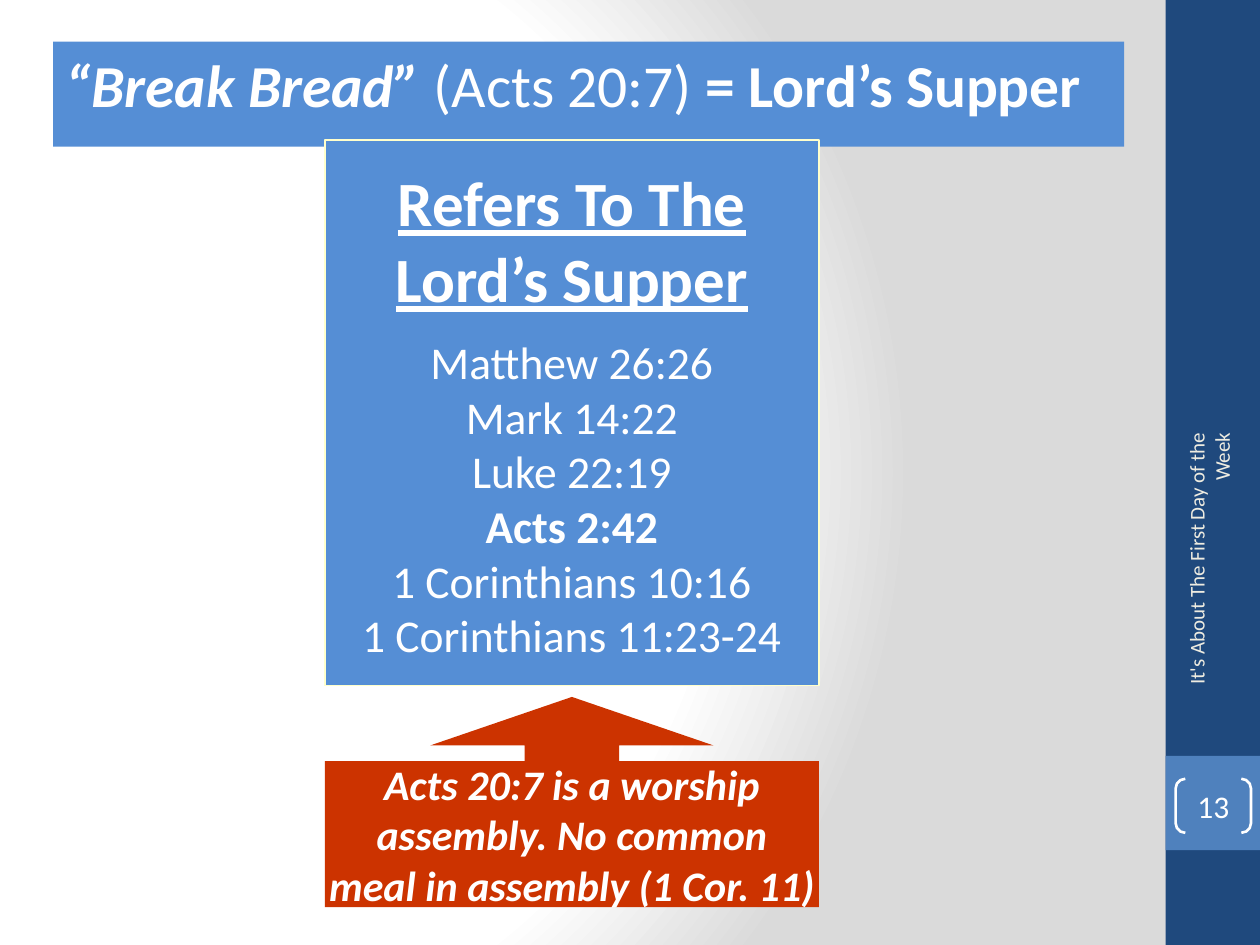
"""Build a Bible-study slide that links "Break Bread" to the Lord's Supper."""
from pptx import Presentation
from pptx import util as u
from pptx.dml.color import RGBColor
from pptx.enum import shapes, text
from pptx.oxml import parse_xml
from pptx.oxml.ns import nsdecls, qn

COLORS = {
    "white": "FFFFFF", "silver": "DADADA", "navy": "1F497D", "tile": "4F81BD",
    "blue": "558ED5", "cream": "FFFFCC", "red": "CC3300", "ivory": "EEECE1",
}
CENTER = text.PP_ALIGN.CENTER
MIDDLE = text.MSO_ANCHOR.MIDDLE


def color(name):
    return RGBColor.from_string(COLORS[name])


def add_span(para, words, size=18, ink="white", bold=False, italic=False, underline=False):
    span = para.add_run()
    span.text = words
    font = span.font
    font.name, font.size = "Calibri", u.Pt(size)
    font.bold, font.italic, font.underline = bold, italic, underline
    font.color.rgb = color(ink)


class SlideBuilder:
    def __init__(self, deck):
        self.page = deck.slides.add_slide(deck.slide_layouts[1])

    def background(self, stops):
        self.page.background.fill.gradient()
        gradient = self.page.element.find(".//" + qn("a:gradFill"))
        for child in list(gradient):
            gradient.remove(child)
        marks = "".join(
            f'<a:gs pos="{percent * 1000}"><a:srgbClr val="{COLORS[name]}"/></a:gs>'
            for percent, name in stops)
        gradient.append(parse_xml(f'<a:gsLst {nsdecls("a")}>{marks}</a:gsLst>'))
        gradient.append(parse_xml(
            f'<a:path {nsdecls("a")} path="circle">'
            '<a:fillToRect l="20000" t="50000" r="100000" b="50000"/></a:path>'))

    def paint(self, box, fill=None, line=None, width=0.75):
        if fill:
            box.fill.solid()
            box.fill.fore_color.rgb = color(fill)
        else:
            box.fill.background()
        if line:
            box.line.color.rgb = color(line)
            box.line.width = u.Pt(width)
        else:
            box.line.fill.background()

    def shape(self, kind, place, adjustments=(), **style):
        box = self.page.shapes.add_shape(kind, *map(u.Cm, place))
        box.shadow.inherit = False
        for index, value in enumerate(adjustments):
            box.adjustments[index] = value
        self.paint(box, **style)
        return box

    def placeholder(self, index, place, **style):
        box = self.page.placeholders[index]
        box.left, box.top, box.width, box.height = map(u.Cm, place)
        self.paint(box, **style)
        return box

    def label(self, place, rotation):
        box = self.page.shapes.add_textbox(*map(u.Cm, place))
        box.rotation = rotation
        return box

    def set_text(self, box, paragraphs, align=CENTER, anchor=MIDDLE, wrap=True,
                 fit=text.MSO_AUTO_SIZE.NONE, inset=None):
        frame = box.text_frame
        frame.auto_size, frame.word_wrap, frame.vertical_anchor = fit, wrap, anchor
        if inset is not None:
            frame.margin_left = frame.margin_right = u.Cm(inset)
            frame.margin_top = frame.margin_bottom = u.Cm(inset)
        for number, (spans, gap) in enumerate(paragraphs):
            para = frame.add_paragraph() if number else frame.paragraphs[0]
            para.alignment, para.space_before = align, u.Pt(gap)
            if box.is_placeholder:
                properties = para._p.get_or_add_pPr()
                properties.set("marL", "0")
                properties.set("indent", "0")
                properties.append(parse_xml(f'<a:buNone {nsdecls("a")}/>'))
            for words, style in spans:
                add_span(para, words, **style)


def main():
    deck = Presentation()
    deck.slide_width, deck.slide_height = u.Cm(25.4), u.Cm(19.05)
    slide = SlideBuilder(deck)
    kinds = shapes.MSO_SHAPE
    slide.background([(0, "white"), (75, "white"), (100, "silver")])
    slide.shape(kinds.RECTANGLE, (23.5, 0, 1.9, 19.05), fill="navy")
    slide.shape(kinds.RECTANGLE, (23.5, 15.24, 1.9, 1.9), fill="tile")

    title = slide.placeholder(0, (1.07, 0.84, 21.59, 1.7), fill="blue")
    slide.set_text(title, [([
        ("“Break Bread” ", dict(size=34, bold=True, italic=True)),
        ("(Acts 20:7) ", dict(size=34)),
        ("= Lord’s Supper", dict(size=34, bold=True)),
    ], 0)], align=text.PP_ALIGN.LEFT, anchor=text.MSO_ANCHOR.TOP,
        fit=text.MSO_AUTO_SIZE.SHAPE_TO_FIT_TEXT)

    heading = dict(size=36, bold=True, underline=True)
    verses = ["Matthew 26:26", "Mark 14:22", "Luke 22:19", "Acts 2:42",
              "1 Corinthians 10:16", "1 Corinthians 11:23-24"]
    lines = [([(words, heading)], 0) for words in ("Refers To The", "Lord’s Supper")]
    lines += [([(verse, dict(size=26, bold=verse == "Acts 2:42"))],
               0 if number else 11) for number, verse in enumerate(verses)]
    body = slide.placeholder(1, (6.55, 2.82, 9.96, 11), fill="blue", line="cream")
    slide.set_text(body, lines, wrap=False)

    callout = slide.shape(kinds.UP_ARROW_CALLOUT, (6.55, 14.05, 9.96, 4.24),
                          (0.449, 0.674, 0.231, 0.695), fill="red")
    remark = ["Acts 20:7 is a worship", "assembly. No common", "meal in assembly (1 Cor. 11)"]
    slide.set_text(callout, [([(words, dict(size=24, bold=True, italic=True))], 0)
                             for words in remark], wrap=False)

    bracket = slide.shape(kinds.DOUBLE_BRACKET, (23.7, 15.7, 1.52, 1.09), (0.179,),
                          line="white", width=1.5)
    slide.set_text(bracket, [([("13", dict(size=18))], 0)], inset=0)

    footer = slide.label((21.08, 11.25, 6.58, 1.02), 270)
    slide.set_text(footer, [([("It's About The First Day of the Week",
                               dict(size=12, ink="ivory"))], 0)], align=text.PP_ALIGN.RIGHT)
    deck.save("out.pptx")


if __name__ == "__main__":
    main()
